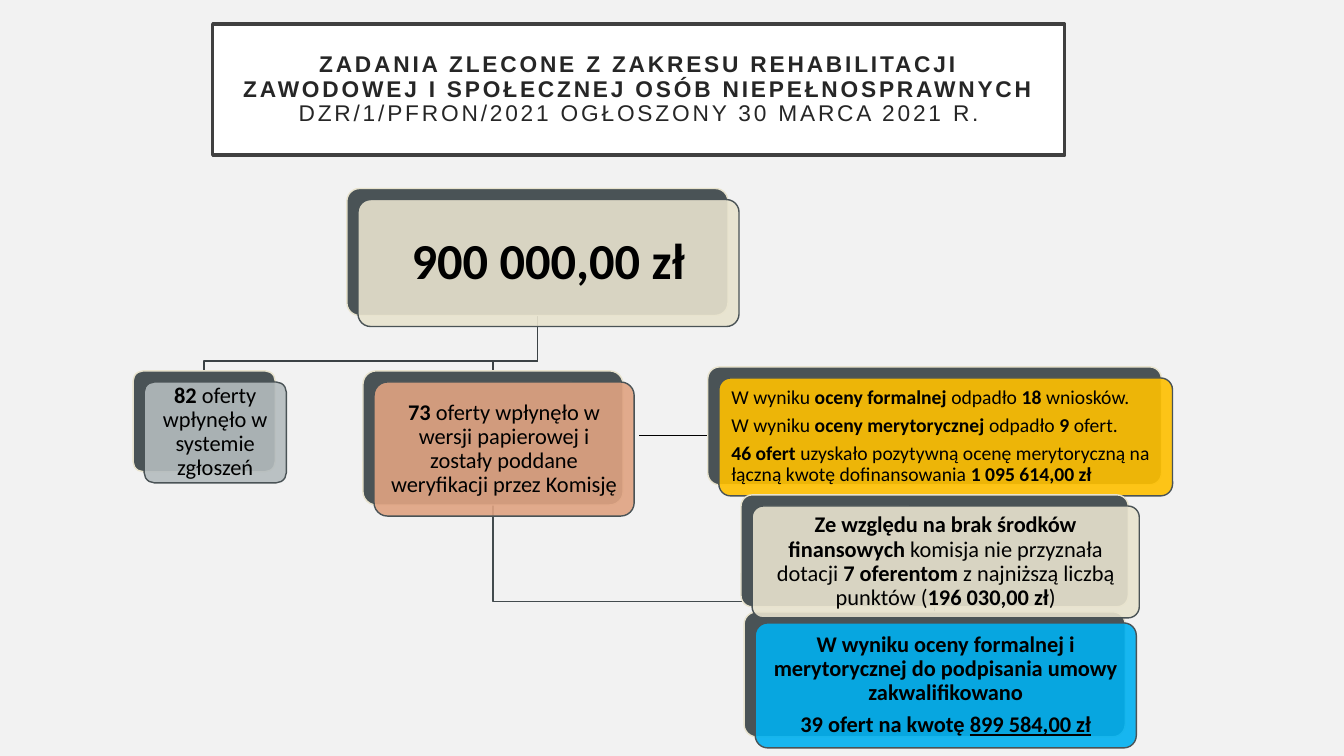
from pptx import Presentation
from pptx import util as u
from pptx.dml import color
from pptx.enum import shapes, text
from pptx.oxml import xmlchemy, ns
from lxml import etree

HUES = {
    "back": "F2F2F2", "white": "FFFFFF", "frame": "404040", "title": "262626",
    "slate": "4A5356", "sand": "E8E3CE", "grey": "B4BCBE", "clay": "E0A382",
    "blue": "00B0F0", "gold": "FFC000", "black": "000000",
    "limb": "3B4245", "tail": "434B4E",
}
STEP = 0.11
MID = text.PP_ALIGN.CENTER
LEFT = text.PP_ALIGN.LEFT


def hue(name):
    return color.RGBColor.from_string(HUES[name])


def paint(shape, fill, line, width, alpha=None):
    shape.shadow.inherit = False
    shape.fill.solid()
    shape.fill.fore_color.rgb = hue(fill)
    if alpha:
        tint = shape.fill._xPr.find(".//" + ns.qn("a:srgbClr"))
        etree.SubElement(tint, ns.qn("a:alpha")).set("val", str(alpha * 1000))
    shape.line.color.rgb = hue(line)
    shape.line.width = u.Pt(width)


def block(slide, kind, box):
    return slide.shapes.add_shape(kind, *(u.Inches(n) for n in box))


def frame(shape, inset):
    body = shape.text_frame
    body.word_wrap = True
    body.vertical_anchor = text.MSO_ANCHOR.MIDDLE
    body.margin_left = body.margin_right = u.Inches(inset)
    body.margin_top = body.margin_bottom = u.Inches(inset)
    return body


def write(para, words, size, face, ink, bold=False, under=False):
    run = para.add_run()
    run.text = words
    run.font.size = u.Pt(size)
    run.font.name = face
    run.font.color.rgb = hue(ink)
    run.font.bold = bold
    if under:
        run.font.underline = True
    return run


def title(slide, box, lines):
    shape = block(slide, shapes.MSO_SHAPE.RECTANGLE, box)
    paint(shape, "white", "frame", 2.5)
    para = frame(shape, 0.2).paragraphs[0]
    para.alignment = MID
    para.line_spacing = 0.9
    for i, (words, bold) in enumerate(lines):
        if i:
            para.add_line_break()
        run = write(para, words, 16.2, "Arial", "title", bold)
        run.font._element.set("spc", "200")


def card(slide, box, fill, paras, size=16, inset=0.1, align=MID):
    left, top, wide, high = box
    for step in (0, STEP):
        spot = (left + step, top + step, wide, high)
        shape = block(slide, shapes.MSO_SHAPE.ROUNDED_RECTANGLE, spot)
        shape.adjustments[0] = 0.1
        if step:
            paint(shape, fill, "slate", 1, 90)
        else:
            paint(shape, "slate", "sand", 1)
    body = frame(shape, inset)
    for i, runs in enumerate(paras):
        para = body.add_paragraph() if i else body.paragraphs[0]
        para.alignment = align
        para.line_spacing = 0.9
        para.space_after = u.Pt(size * 0.35)
        for words, style in runs:
            write(para, words, size, "Calibri", "black", "b" in style, "u" in style)


def limb(slide, start, end, ink):
    (left, top), (right, low) = start, end
    bend = low - 0.1
    pen = slide.shapes.build_freeform(u.Inches(left), u.Inches(top))
    turns = [(left, bend), (right, bend), (right, low)]
    pen.add_line_segments([(u.Inches(x), u.Inches(y)) for x, y in turns], close=False)
    shape = pen.convert_to_shape()
    shape.shadow.inherit = False
    shape.fill.background()
    shape.line.color.rgb = hue(ink)
    shape.line.width = u.Pt(1)


def link(slide, left, right, y):
    line = slide.shapes.add_connector(
        shapes.MSO_CONNECTOR.STRAIGHT,
        u.Inches(left), u.Inches(y), u.Inches(right), u.Inches(y))
    line.line.color.rgb = hue("black")
    line.line.width = u.Pt(0.5)
    etree.SubElement(line._element.spPr, ns.qn("a:effectLst"))


def foot(box):
    left, top, wide, high = box
    return left + wide / 2, top + high


def head(box):
    left, top, wide, high = box
    return left + wide / 2, top


def chart(slide):
    root = (3.44, 1.87, 3.78, 1.26)
    web = (1.32, 3.68, 1.41, 1)
    paper = (3.6, 3.68, 2.58, 1.33)
    deal = (7.38, 6.07, 3.78, 1.24)
    limb(slide, foot(paper), head(deal), "tail")
    for box in (paper, web):
        limb(slide, foot(root), head(box), "limb")
    card(slide, root, "sand", [[("900 000,00 zł", "b")]], 36, 0.18)
    card(slide, web, "grey", [[("82", "b"), (" oferty wpłynęło w systemie zgłoszeń", "")]])
    card(slide, paper, "clay", [[
        ("73 ", "b"),
        ("oferty wpłynęło w wersji papierowej i zostały poddane weryfikacji przez Komisję", ""),
    ]])
    card(slide, deal, "blue", [
        [("W wyniku oceny formalnej i merytorycznej do podpisania umowy zakwalifikowano", "b")],
        [("39 ofert na kwotę ", "b"), ("899 584,00 zł", "bu")],
    ])
    card(slide, (7.02, 3.64, 4.5, 1.17), "gold", [
        [("W wyniku ", ""), ("oceny formalnej ", "b"), ("odpadło ", ""),
         ("18 ", "b"), ("wniosków.", "")],
        [("W wyniku ", ""), ("oceny merytorycznej ", "b"), ("odpadło ", ""),
         ("9", "b"), (" ofert.", "")],
        [("46 ofert ", "b"),
         ("uzyskało pozytywną ocenę merytoryczną na łączną kwotę dofinansowania", ""),
         (" 1 095 614,00 zł", "b")],
    ], 14, 0.09, LEFT)
    card(slide, (7.35, 4.91, 3.84, 1.11), "sand", [[
        ("Ze względu na brak środków finansowych", "b"),
        (" komisja nie przyznała dotacji ", ""), ("7 oferentom", "b"),
        (" z najniższą liczbą punktów (", ""), ("196 030,00 zł", "b"), (")", ""),
    ]])
    link(slide, 6.34, 7.01, 4.32)


def main():
    deck = Presentation()
    deck.slide_width = u.Inches(13.33)
    deck.slide_height = u.Inches(7.5)
    slide = deck.slides.add_slide(deck.slide_layouts[6])
    slide.background.fill.solid()
    slide.background.fill.fore_color.rgb = hue("back")
    title(slide, (2.11, 0.24, 8.45, 1.3), [
        ("ZADANIA ZLECONE Z ZAKRESU REHABILITACJI ZAWODOWEJ I SPOŁECZNEJ OSÓB NIEPEŁNOSPRAWNYCH", True),
        ("DZR/1/PFRON/2021 OGŁOSZONY 30 MARCA 2021 R.", False),
    ])
    chart(slide)
    deck.save("out.pptx")


if __name__ == "__main__":
    main()
